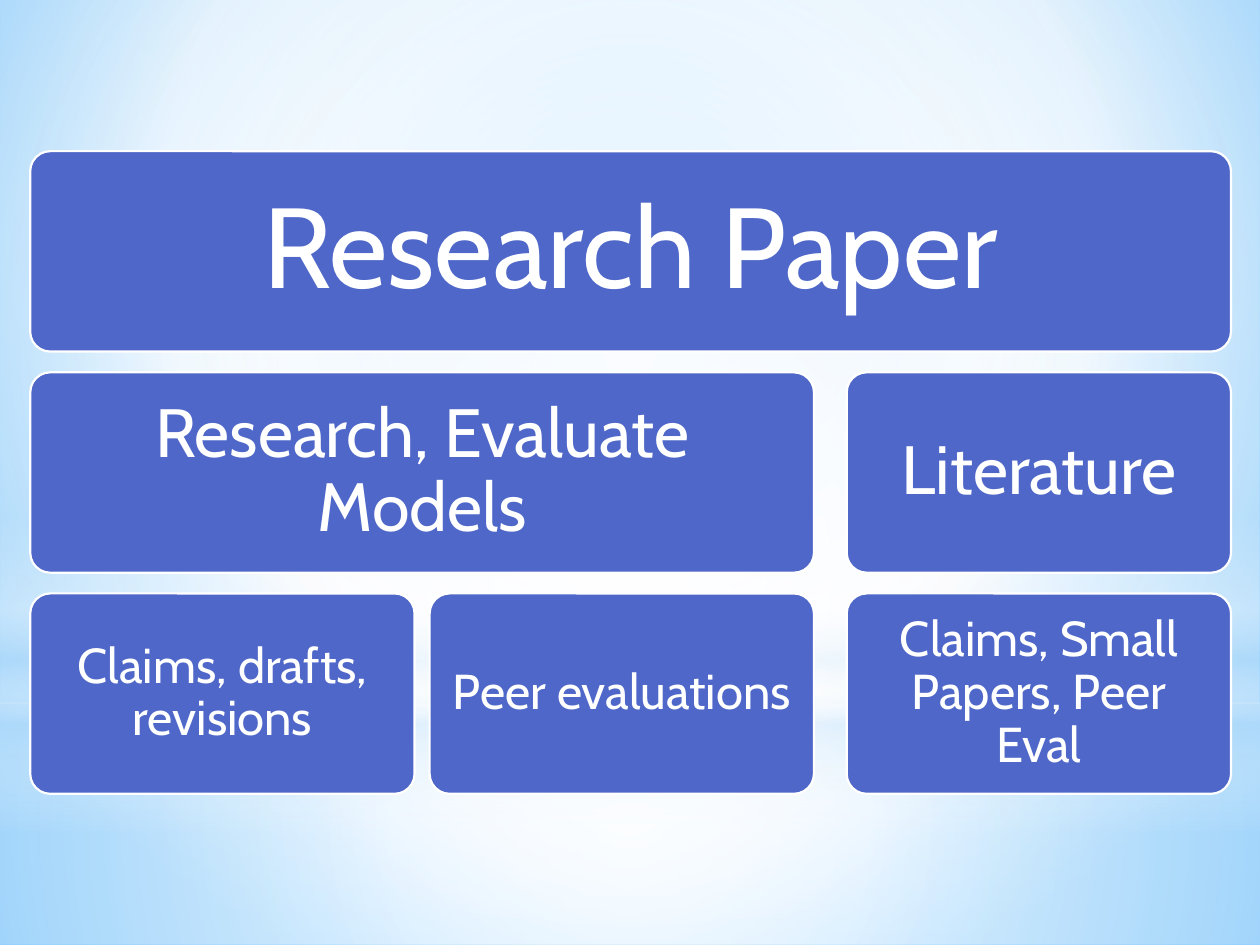
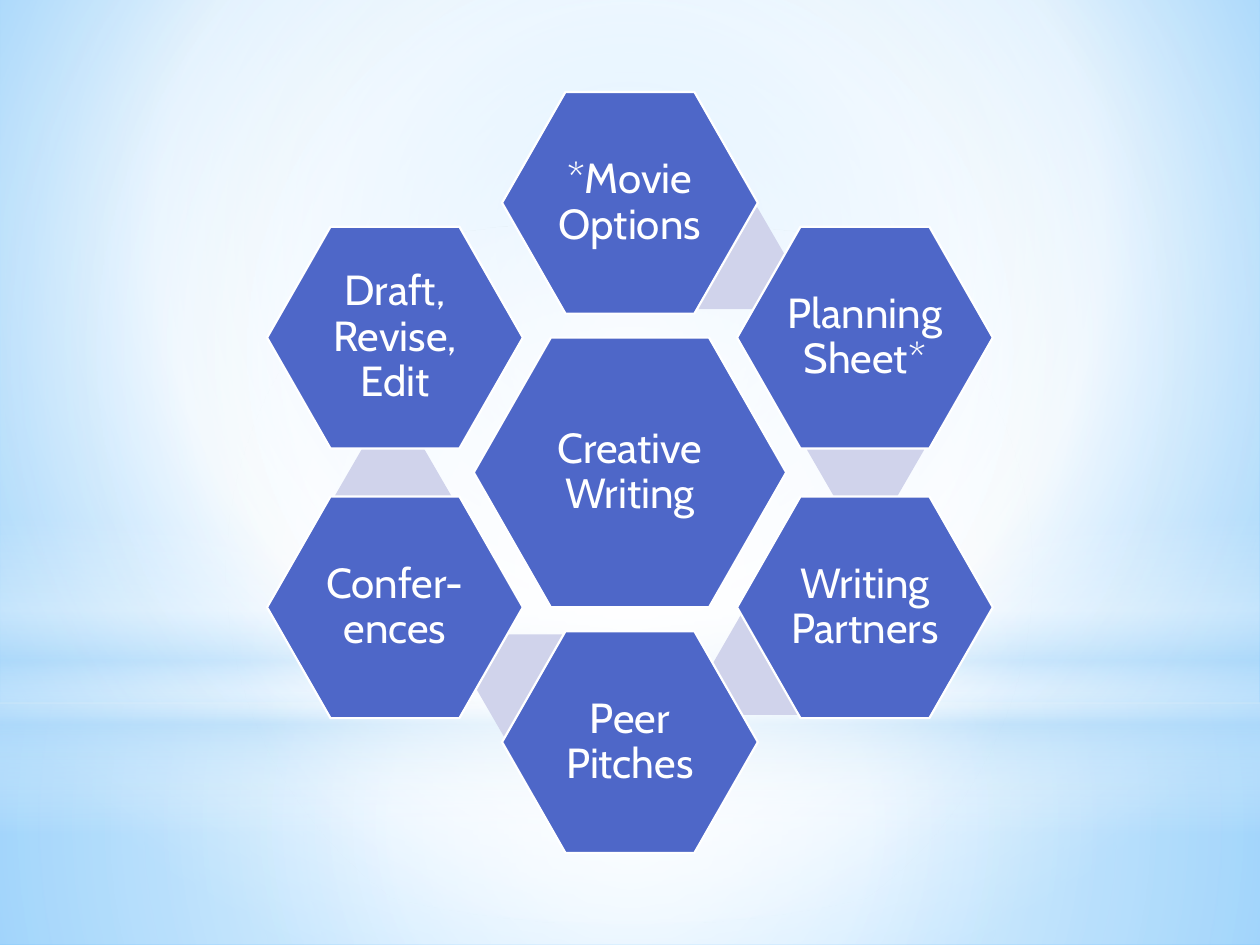
from lxml.etree import SubElement
from pptx import Presentation
from pptx.dml.color import RGBColor
from pptx.enum.shapes import MSO_SHAPE as SHAPE
from pptx.enum.text import MSO_ANCHOR as ANCHOR, PP_ALIGN as ALIGN
from pptx.oxml.ns import qn
from pptx.util import Inches, Pt

FONT = "Cabin"
C = {"tile": "4E67C8", "accent": "D0D3EB", "white": "FFFFFF",
     "mist": "B4DCFA", "sky": "9ED5FF", "deep": "5BB9FF"}
CENTRE = (50, 50, 50, 50)
BACKDROP = [(0, "sky", 100), (60, "white", 100), (100, "deep", 100)]
LAYERS = [
    (SHAPE.RECTANGLE, (0, 5.58, 10, 1.92), CENTRE,
     [(0, "white", 91), (37, "white", 76), (100, "mist", 79)]),
    (SHAPE.RECTANGLE, (0, 0, 10, 5.58), CENTRE,
     [(0, "white", 89), (48, "white", 62), (100, "mist", 79)]),
    (SHAPE.RECTANGLE, (0, 4.12, 10, 2.5), None,
     [(0, "white", 0), (29, "white", 30), (45, "mist", 40),
      (55, "white", 26), (65, "mist", 60), (100, "white", 0)]),
    (SHAPE.OVAL, (0, 1.75, 10, 5.58), CENTRE,
     [(0, "white", 100), (56, "white", 0)]),
]


def rgb(name):
    """Return a palette colour."""
    return RGBColor.from_string(C[name])


def set_gradient(fill, element, stops, focus):
    """Give a fill a radial gradient around focus, or a vertical one without it."""
    fill.gradient()
    grad = element.find(".//" + qn("a:gradFill"))
    grad.clear()
    grad.set("rotWithShape", "1")
    gs_list = SubElement(grad, qn("a:gsLst"))
    for pos, color, opacity in stops:
        gs = SubElement(gs_list, qn("a:gs"), pos=str(pos * 1000))
        clr = SubElement(gs, qn("a:srgbClr"), val=C[color])
        if opacity < 100:
            SubElement(clr, qn("a:alpha"), val=str(opacity * 1000))
    if focus:
        radial = SubElement(grad, qn("a:path"), {"path": "circle"})
        sides = {side: str(v * 1000) for side, v in zip("ltrb", focus)}
        SubElement(radial, qn("a:fillToRect"), sides)
    else:
        SubElement(grad, qn("a:lin"), ang="5400000", scaled="0")


def add_shape(s, kind, box):
    """Add a preset shape without shadow or line; box is in inches."""
    sp = s.shapes.add_shape(kind, *map(Inches, box))
    sp.shadow.inherit = False
    sp.line.fill.background()
    return sp


def add_backdrop(s):
    """Paint the sky background and its light layers."""
    set_gradient(s.background.fill, s.element, BACKDROP, (20, 10, 20, 60))
    for kind, box, focus, stops in LAYERS:
        sp = add_shape(s, kind, box)
        set_gradient(sp.fill, sp.element, stops, focus)


def add_tile(s, kind, box, adj, text, size, inset):
    """Add a blue tile with white centred text."""
    sp = add_shape(s, kind, box)
    sp.adjustments[0] = adj
    sp.fill.solid()
    sp.fill.fore_color.rgb = rgb("tile")
    sp.line.color.rgb = rgb("white")
    sp.line.width = Pt(1.25)
    tf = sp.text_frame
    tf.word_wrap = True
    tf.vertical_anchor = ANCHOR.MIDDLE
    tf.margin_left = tf.margin_right = Inches(inset)
    tf.margin_top = tf.margin_bottom = Inches(inset)
    tf.text = text
    p = tf.paragraphs[0]
    p.alignment = ALIGN.CENTER
    p.line_spacing = 0.9
    font = p.runs[0].font
    font.name, font.size, font.color.rgb = FONT, Pt(size), rgb("white")


def add_hexagon(s, cx, cy, w, h, text):
    """Add a hexagonal tile around a centre."""
    add_tile(s, SHAPE.HEXAGON, (cx - w / 2, cy - h / 2, w, h), 0.286, text, 24, 0.03)


def add_accent(s, cx, cy):
    """Add a small pale hexagon around a centre."""
    w, h = 0.93, 0.81
    sp = add_shape(s, SHAPE.HEXAGON, (cx - w / 2, cy - h / 2, w, h))
    sp.adjustments[0] = 0.289
    sp.fill.solid()
    sp.fill.fore_color.rgb = rgb("accent")


def add_hierarchy(s, box):
    """Stack three rows of tiles in a box; tiles span columns of equal width."""
    left, top, width, height = box
    col_w, row_h = 3.05, 1.59
    columns = [0, 3.17, width - col_w]
    row_step = (height - row_h) / 2
    levels = [
        (65, 0.27, [("Research Paper", 0, 2)]),
        (39, 0.16, [("Research, Evaluate Models", 0, 1), ("Literature", 2, 2)]),
        (28, 0.12, [("Claims, drafts, revisions", 0, 0), ("Peer evaluations", 1, 1),
                    ("Claims, Small Papers, Peer Eval", 2, 2)]),
    ]
    for row, (size, inset, tiles) in enumerate(levels):
        for text, first, last in tiles:
            w = columns[last] + col_w - columns[first]
            tile = (left + columns[first], top + row * row_step, w, row_h)
            add_tile(s, SHAPE.ROUNDED_RECTANGLE, tile, 0.1, text, size, inset)


def add_hexagon_ring(s, box):
    """Set six hexagons clockwise around a larger one in the middle of a box."""
    left, top, width, height = box
    cx, cy = left + width / 2, top + height / 2
    w, h = 2.03, 1.76
    step_x, step_y = (width - w) / 2, (height - h) / 4
    ring = [
        ("*Movie Options", 0, -2, (0.78, -1.7)),
        ("Planning Sheet*", 1, -1, (1.87, -0.18)),
        ("Writing Partners", 1, 1, (1.12, 1.52)),
        ("Peer Pitches", 0, 2, (-0.77, 1.69)),
        ("Confer-ences", -1, 1, (-1.88, 0.19)),
        ("Draft, Revise, Edit", -1, -1, None),
    ]
    add_hexagon(s, cx, cy, 2.48, 2.14, "Creative Writing")
    for text, col, row, accent in ring:
        if accent:
            add_accent(s, cx + accent[0], cy + accent[1])
        add_hexagon(s, cx + col * step_x, cy + row * step_y, w, h, text)


def main():
    """Build both slides and save them."""
    prs = Presentation()
    prs.slide_width, prs.slide_height = Inches(10), Inches(7.5)
    diagrams = [(add_hierarchy, (0.24, 1.2, 9.53, 5.1)),
                (add_hexagon_ring, (2.12, 0.73, 5.76, 6.04))]
    for add_diagram, box in diagrams:
        s = prs.slides.add_slide(prs.slide_layouts[6])
        add_backdrop(s)
        add_diagram(s, box)
    prs.save("out.pptx")


if __name__ == "__main__":
    main()
